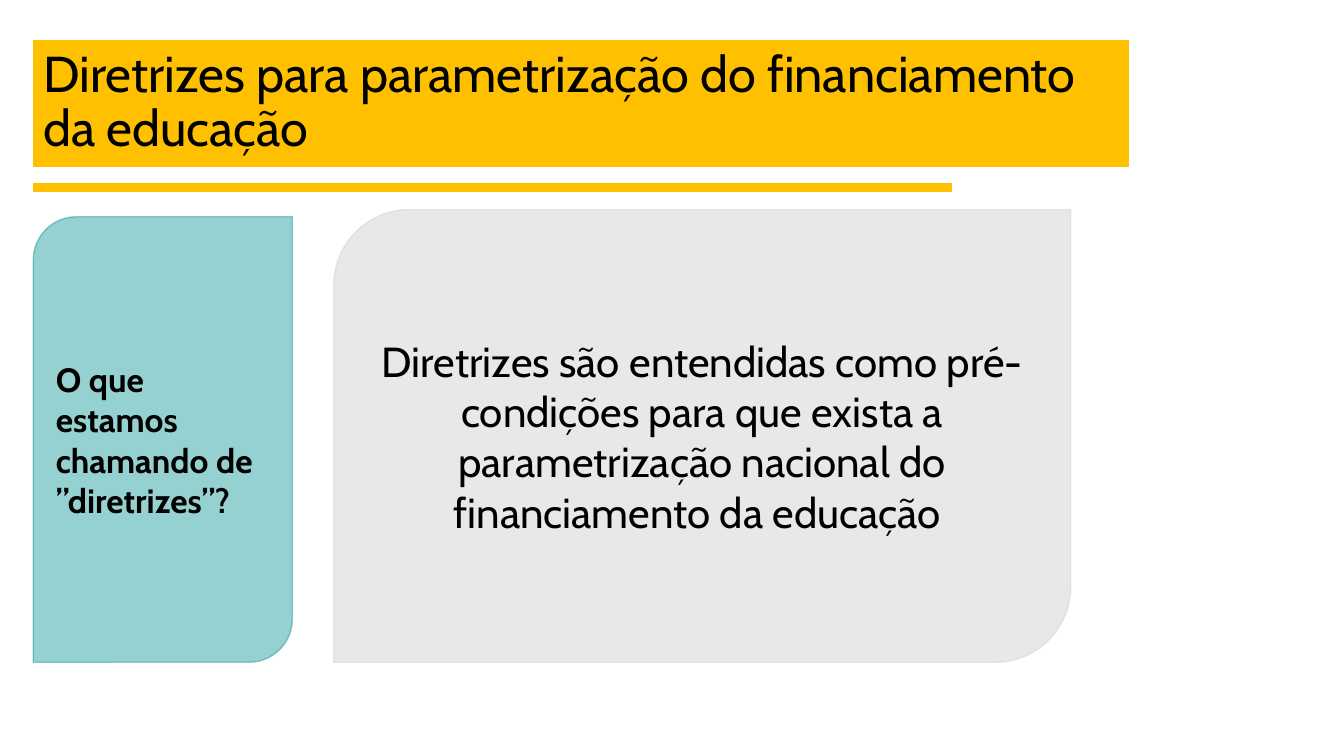
from lxml import etree
from pptx import Presentation
from pptx.dml.color import RGBColor
from pptx.enum import shapes, text
from pptx.oxml import ns
from pptx.util import Inches, Pt

AMBER = RGBColor(0xFF, 0xC0, 0x00)
TEAL = RGBColor(0x00, 0x91, 0x93)
GREY = RGBColor(0xC9, 0xC9, 0xC9)
GREY_EDGE = RGBColor(0xD0, 0xCE, 0xCE)
BLACK = RGBColor(0x00, 0x00, 0x00)
FONT = "Cabin"
LEFT = Inches(0.33)
PANEL_OPACITY = 41000

deck = Presentation()
deck.slide_width = Inches(13.33)
deck.slide_height = Inches(7.5)
page = deck.slides.add_slide(deck.slide_layouts[6])


def add_panel(preset, frame, fill, edge, edge_width, wording, size, align):
    """Add a filled shape with one paragraph; return the shape and paragraph."""
    panel = page.shapes.add_shape(preset, *frame)
    panel.shadow.inherit = False
    panel.fill.solid()
    panel.fill.fore_color.rgb = fill
    panel.line.color.rgb = edge
    panel.line.width = Pt(edge_width)
    panel.text_frame.word_wrap = True
    panel.text_frame.vertical_anchor = text.MSO_ANCHOR.MIDDLE
    para = panel.text_frame.paragraphs[0]
    para.alignment = align
    span = para.add_run()
    span.text = wording
    span.font.name = FONT
    span.font.size = Pt(size)
    span.font.color.rgb = BLACK
    return panel, para


rule = page.shapes.add_connector(
    shapes.MSO_CONNECTOR.STRAIGHT, LEFT, Inches(1.86), Inches(9.44), Inches(1.86))
rule.line.color.rgb = AMBER
rule.line.width = Pt(6)
etree.SubElement(rule._element.spPr, ns.qn("a:effectLst"))

title, title_para = add_panel(
    shapes.MSO_SHAPE.RECTANGLE,
    (LEFT, Inches(0.4), Inches(10.86), Inches(1.25)),
    AMBER, AMBER, 0.75,
    "Diretrizes para parametrização do financiamento da educação",
    36, text.PP_ALIGN.LEFT)
title_para.line_spacing = 0.9

question, question_para = add_panel(
    shapes.MSO_SHAPE.ROUND_2_DIAG_RECTANGLE,
    (LEFT, Inches(2.15), Inches(2.57), Inches(4.42)),
    TEAL, TEAL, 1,
    "O que estamos chamando de ”diretrizes”?",
    24, text.PP_ALIGN.LEFT)
question_para.space_before = Pt(12)
question_para.runs[0].font.bold = True

answer, answer_para = add_panel(
    shapes.MSO_SHAPE.ROUND_2_DIAG_RECTANGLE,
    (Inches(3.31), Inches(2.08), Inches(7.31), Inches(4.49)),
    GREY, GREY_EDGE, 1,
    "Diretrizes são entendidas como pré-condições para que exista a "
    "parametrização nacional do financiamento da educação ",
    30, text.PP_ALIGN.CENTER)

for panel in (question, answer):
    for colour in panel._element.spPr.iter(ns.qn("a:srgbClr")):
        etree.SubElement(colour, ns.qn("a:alpha"), val=str(PANEL_OPACITY))

deck.save("out.pptx")
